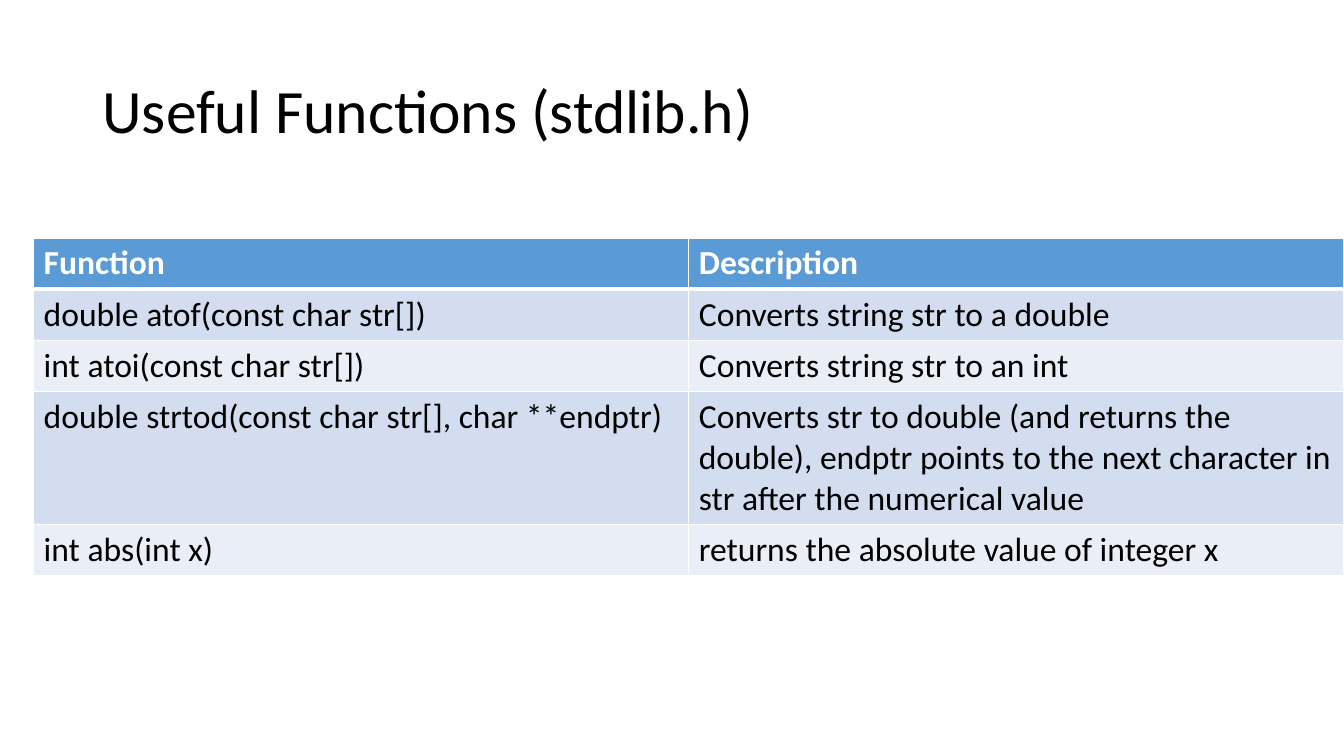
"""Build a slide with a table of useful stdlib.h functions."""
import dataclasses

import lxml.etree
import pptx
import pptx.dml.color
import pptx.enum.text
import pptx.oxml.ns
import pptx.slide
import pptx.table
import pptx.text.text
import pptx.util

Pt = pptx.util.Pt
RGBColor = pptx.dml.color.RGBColor

FONT = "Calibri"
BLACK = RGBColor(0x00, 0x00, 0x00)
WHITE = RGBColor(0xFF, 0xFF, 0xFF)
HEADER_BLUE = RGBColor(0x5B, 0x9B, 0xD5)
BAND_DARK = RGBColor(0xD2, 0xDE, 0xEF)
BAND_LIGHT = RGBColor(0xEA, 0xEF, 0xF7)

COLUMN_WIDTH = 468
ROW_HEIGHT = 29.2
THIN, THICK = 1, 3


@dataclasses.dataclass(frozen=True)
class Entry:
    function: str
    description: str


ENTRIES = [
    Entry("Function", "Description"),
    Entry("double atof(const char str[])", "Converts string str to a double"),
    Entry("int atoi(const char str[])", "Converts string str to an int"),
    Entry(
        "double strtod(const char str[], char **endptr)",
        "Converts str to double (and returns the double), endptr points to "
        "the next character in str after the numerical value",
    ),
    Entry("int abs(int x)", "returns the absolute value of integer x"),
]


def style_font(para: pptx.text.text._Paragraph, size: float, color: RGBColor, bold: bool) -> None:
    para.font.name = FONT
    para.font.size = Pt(size)
    para.font.bold = bold
    para.font.color.rgb = color


def add_border(cell: pptx.table._Cell, side: str, width: float) -> None:
    qn = pptx.oxml.ns.qn
    properties = cell._tc.get_or_add_tcPr()
    line = lxml.etree.SubElement(properties, qn(f"a:ln{side}"), w=str(Pt(width)))
    fill = lxml.etree.SubElement(line, qn("a:solidFill"))
    lxml.etree.SubElement(fill, qn("a:srgbClr"), val=str(WHITE))


def fill_cell(cell: pptx.table._Cell, text: str, row: int) -> None:
    header = row == 0
    cell.text = text
    style_font(cell.text_frame.paragraphs[0], 24, WHITE if header else BLACK, header)
    widths = {"L": THIN, "R": THIN, "T": THICK if row == 1 else THIN, "B": THICK if header else THIN}
    for side, width in widths.items():
        add_border(cell, side, width)
    cell.fill.solid()
    cell.fill.fore_color.rgb = HEADER_BLUE if header else (BAND_LIGHT, BAND_DARK)[row % 2]


def add_title(page: pptx.slide.Slide, text: str) -> None:
    title = page.shapes.title
    title.left, title.top, title.width, title.height = Pt(66), Pt(28.8), Pt(828), Pt(104.4)
    box = title.text_frame
    box.text = text
    box.word_wrap = True
    box.auto_size = pptx.enum.text.MSO_AUTO_SIZE.NONE
    box.vertical_anchor = pptx.enum.text.MSO_ANCHOR.MIDDLE
    para = box.paragraphs[0]
    para.alignment = pptx.enum.text.PP_ALIGN.LEFT
    para.line_spacing = 0.9
    style_font(para, 44, BLACK, False)


def add_function_table(page: pptx.slide.Slide, entries: list[Entry]) -> None:
    table = page.shapes.add_table(
        len(entries), 2, Pt(24), Pt(170), Pt(2 * COLUMN_WIDTH), Pt(ROW_HEIGHT * len(entries))
    ).table
    for row, entry in enumerate(entries):
        for column, text in enumerate(dataclasses.astuple(entry)):
            fill_cell(table.cell(row, column), text, row)


def main() -> None:
    deck = pptx.Presentation()
    deck.slide_width, deck.slide_height = Pt(960), Pt(540)
    page = deck.slides.add_slide(deck.slide_layouts.get_by_name("Title Only"))
    add_title(page, "Useful Functions (stdlib.h)")
    add_function_table(page, ENTRIES)
    deck.save("out.pptx")


if __name__ == "__main__":
    main()
